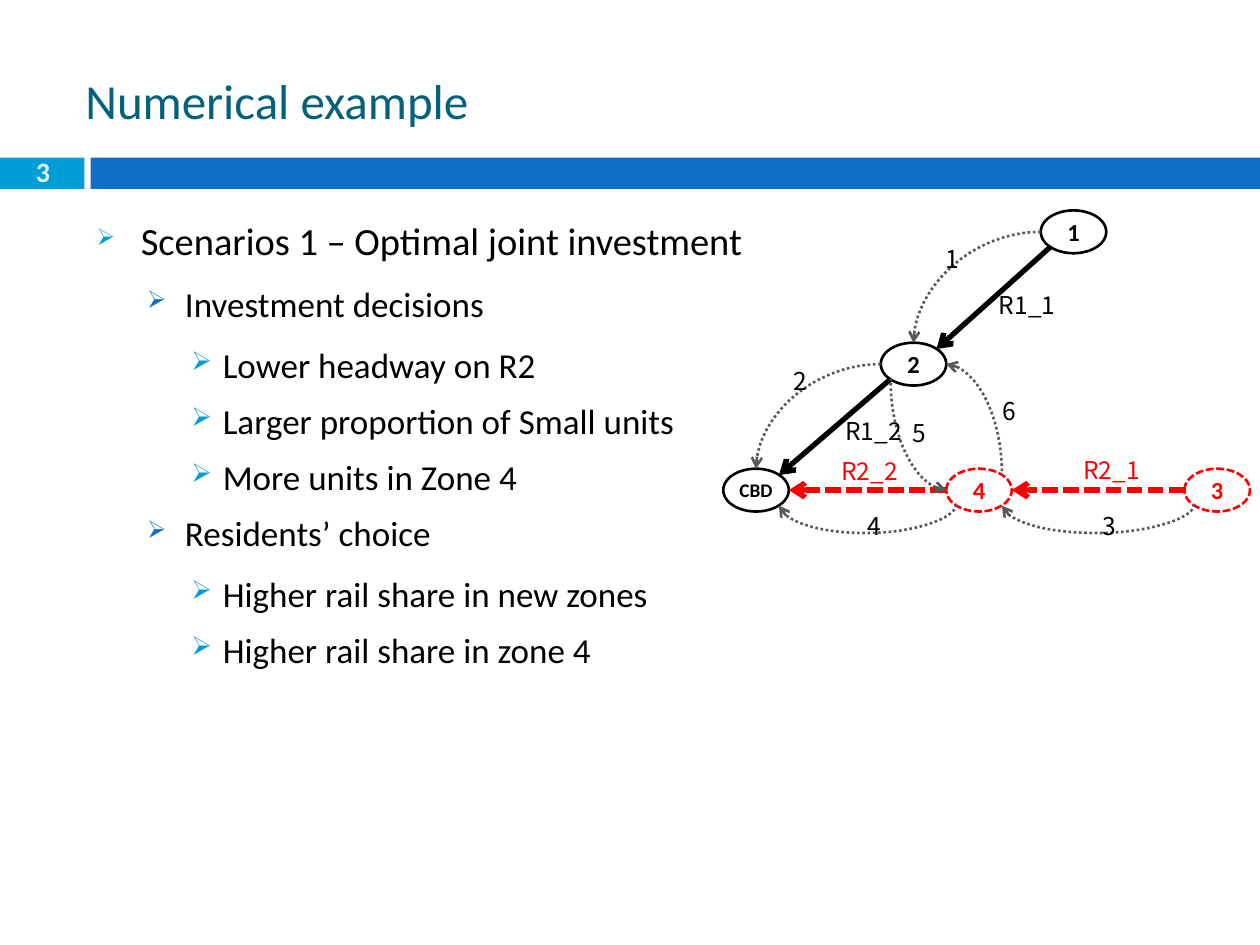
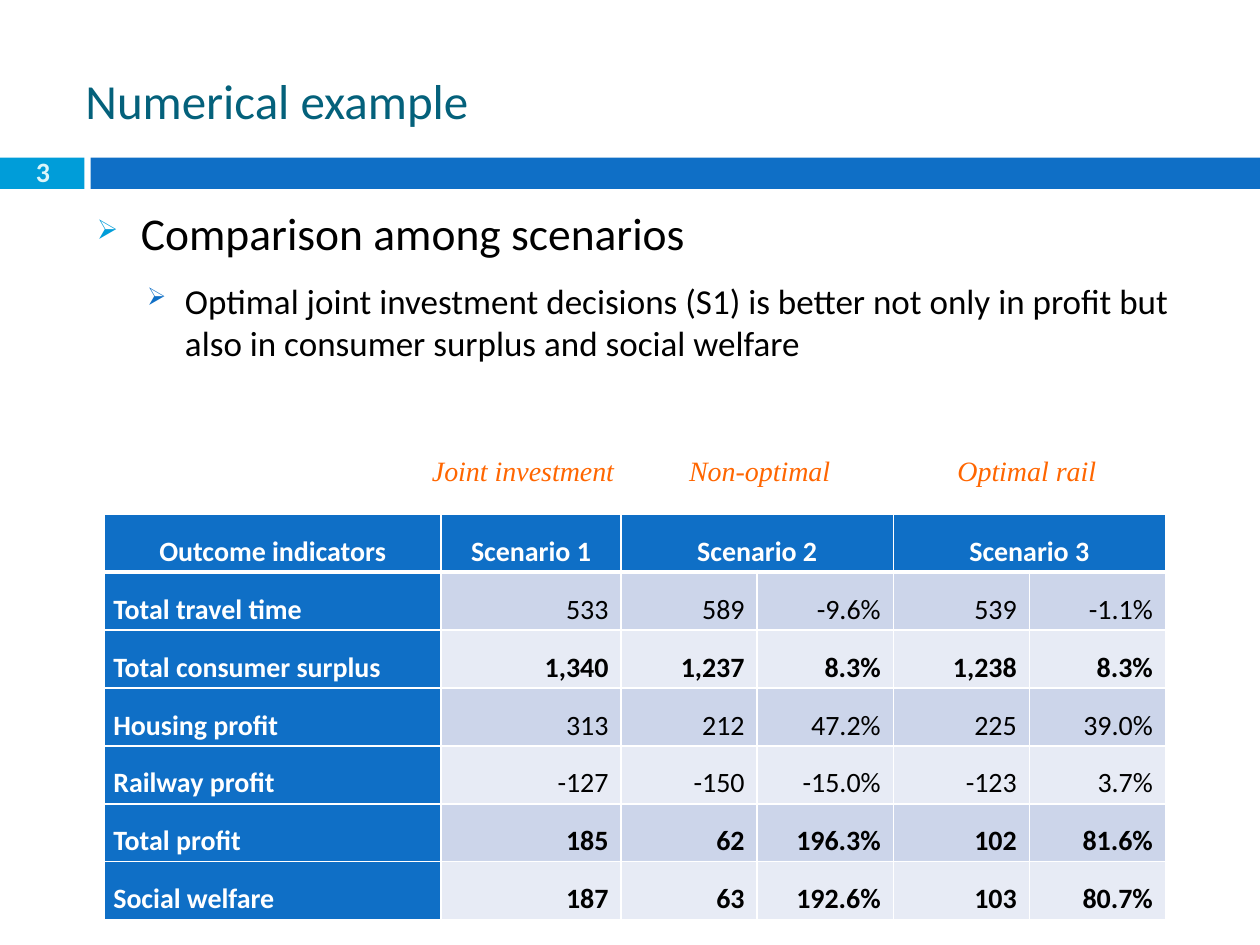
from dataclasses import dataclass

from lxml.etree import SubElement
from pptx import Presentation
from pptx.dml.color import RGBColor
from pptx.enum.dml import MSO_LINE as Dash
from pptx.enum.shapes import MSO_CONNECTOR as Link, MSO_SHAPE as Preset
from pptx.enum.text import MSO_ANCHOR as Anchor, PP_ALIGN as Align
from pptx.oxml.ns import qn
from pptx.util import Inches, Pt

CYAN, BLUE, TEAL, PALE = "009DD9", "0F6FC6", "04617B", "DBF5F9"
BLACK, WHITE, RED, GREY, ORANGE = "000000", "FFFFFF", "FF0000", "595959", "FF6600"
BAND_FILLS = ("CCD5EA", "E7EBF5")
BODY_FONT, LABEL_FONT, CAPTION_FONT = "Calibri", "Noto Sans CJK SC", "Times New Roman"

NODE_WIDTH, NODE_HEIGHT = 0.52, 0.34
DIAGONAL = 0.35  # half of cos 45 degrees
# Where routes touch an ellipse: offset from its centre as a share of its size
SITES = {
    "top": (0, -0.5),
    "left": (-0.5, 0),
    "bottom left": (-DIAGONAL, DIAGONAL),
    "bottom right": (DIAGONAL, DIAGONAL),
    "right": (0.5, 0),
    "top right": (DIAGONAL, -DIAGONAL),
}
LOOP_DEPTH, LOOP_WIDTH = 0.23, 0.01


@dataclass(frozen=True)
class Level:
    margin: float
    hanging: float
    before: int
    after: int
    color: str
    bullet_percent: int


@dataclass(frozen=True)
class Node:
    name: str
    left: float
    top: float
    color: str = BLACK
    size: int = 14
    dash: Dash | None = None


@dataclass(frozen=True)
class Route:
    start: str
    start_site: str
    end: str
    end_site: str
    kind: str
    color: str = GREY
    width: float = 1.5
    dash: Dash | None = Dash.ROUND_DOT
    arrow: str = "tailEnd"


@dataclass(frozen=True)
class Label:
    text: str
    left: float
    top: float
    width: float = 0.2
    height: float = 0.24
    color: str = BLACK


LEVELS = (
    Level(0.35, 0.35, 3, 6, CYAN, 60),
    Level(0.7, 0.3, 5, 6, BLUE, 70),
    Level(1, 0.25, 5, 3, CYAN, 75),
)

NODES = (
    Node("CBD", 5.74, 3.72, size=11),
    Node("2", 6.99, 2.72),
    Node("1", 8.26, 1.67),
    Node("4", 7.51, 3.72, RED, dash=Dash.SQUARE_DOT),
    Node("3", 9.4, 3.72, RED, dash=Dash.SQUARE_DOT),
)

# A quarter curve leaves its start horizontally and reaches its end vertically.
ROUTES = (
    Route("1", "bottom left", "2", "top right", "straight", BLACK, 3, None),
    Route("2", "bottom left", "CBD", "top right", "straight", BLACK, 3, None),
    Route("4", "left", "CBD", "right", "straight", RED, 3, Dash.SQUARE_DOT),
    Route("3", "left", "4", "right", "straight", RED, 3, Dash.SQUARE_DOT),
    Route("1", "left", "2", "top", "quarter"),
    Route("2", "left", "CBD", "top", "quarter"),
    Route("3", "bottom left", "4", "bottom right", "loop"),
    Route("4", "bottom left", "CBD", "bottom right", "loop"),
    Route("2", "right", "4", "top right", "quarter", arrow="headEnd"),
    Route("4", "left", "2", "bottom left", "quarter", arrow="headEnd"),
)

LABELS = (
    Label("2", 6.2, 2.86),
    Label("1", 7.41, 1.89),
    Label("4", 6.79, 4.01),
    Label("3", 8.65, 4.01),
    Label("6", 7.86, 3.09),
    Label("5", 7.14, 3.27),
    Label("R1_1", 7.83, 2.25, 0.76, 0.34),
    Label("R1_2", 6.61, 3.25, 0.72, 0.34),
    Label("R2_2", 6.58, 3.57, 0.9, 0.34, RED),
    Label("R2_1", 8.5, 3.56, 0.92, 0.34, RED),
)

COLUMN_WIDTHS = (2.67, 1.43, 1.08, 1.08, 1.08, 1.08)
ROW_HEIGHT = 0.46
HEADERS = {0: "Outcome indicators", 1: "Scenario 1", 2: "Scenario 2", 4: "Scenario 3"}
OUTCOMES = (
    ("Total travel time", "533", "589", "-9.6%", "539", "-1.1%"),
    ("Total consumer surplus", "1,340", "1,237", "8.3%", "1,238", "8.3%"),
    ("Housing profit", "313", "212", "47.2%", "225", "39.0%"),
    ("Railway profit", "-127", "-150", "-15.0%", "-123", "3.7%"),
    ("Total profit", "185", "62", "196.3%", "102", "81.6%"),
    ("Social welfare", "187", "63", "192.6%", "103", "80.7%"),
)
KEY_OUTCOMES = {"Total consumer surplus", "Total profit", "Social welfare"}


def rgb(color: str) -> RGBColor:
    return RGBColor.from_string(color)


def inches(*lengths: float) -> list:
    return [Inches(length) for length in lengths]


def write(para, text: str, size: float, color: str = BLACK, font: str = BODY_FONT,
          bold: bool = False, italic: bool = False, align=Align.LEFT) -> None:
    para.alignment = align
    span = para.add_run()
    span.text = text
    span.font.name, span.font.size = font, Pt(size)
    span.font.bold, span.font.italic = bold, italic
    span.font.color.rgb = rgb(color)


def add_text(shapes, text: str, at: tuple, size: float, anchor=Anchor.TOP,
             right_inset: float = 0.1, **style) -> None:
    box = shapes.add_textbox(*inches(*at))
    frame = box.text_frame
    frame.word_wrap, frame.vertical_anchor = True, anchor
    frame.margin_right = Inches(right_inset)
    write(frame.paragraphs[0], text, size, **style)


def add_filled(shapes, preset, at: tuple, fill: str):
    shape = shapes.add_shape(preset, *inches(*at))
    shape.shadow.inherit = False
    shape.fill.solid()
    shape.fill.fore_color.rgb = rgb(fill)
    shape.line.fill.background()
    return shape


def style_line(line, color: str, width: float, dash) -> None:
    line.color.rgb = rgb(color)
    line.width = Pt(width)
    if dash is not None:
        line.dash_style = dash


def add_page(deck):
    """Add a page with the title and bands that all pages share."""
    page = deck.slides.add_slide(deck.slide_layouts[6])
    add_filled(page.shapes, Preset.RECTANGLE, (0, 1.25, 0.67, 0.25), CYAN)
    add_filled(page.shapes, Preset.RECTANGLE, (0.72, 1.25, 9.28, 0.25), BLUE)
    add_text(page.shapes, "Numerical example", (0.58, 0.25, 8.92, 1.08), 28,
             anchor=Anchor.MIDDLE, color=TEAL)
    add_text(page.shapes, "3", (0.03, 1.18, 0.62, 0.37), 16,
             color=PALE, bold=True, align=Align.CENTER)
    return page


def add_bullets(shapes, at: tuple, items: tuple, heading_size: int) -> None:
    """Write (level, text) pairs as a bulleted outline."""
    frame = shapes.add_textbox(*inches(*at)).text_frame
    frame.word_wrap = True
    for index, (depth, text) in enumerate(items):
        para = frame.add_paragraph() if index else frame.paragraphs[0]
        level = LEVELS[depth]
        para.level = depth
        para.space_before, para.space_after = Pt(level.before), Pt(level.after)
        write(para, text, 20 if depth else heading_size)
        properties = para._p.get_or_add_pPr()
        properties.set("marL", str(Inches(level.margin)))
        properties.set("indent", str(-Inches(level.hanging)))
        bullet_color = SubElement(properties, qn("a:buClr"))
        SubElement(bullet_color, qn("a:srgbClr"), val=level.color)
        SubElement(properties, qn("a:buSzPct"), val=str(level.bullet_percent * 1000))
        SubElement(properties, qn("a:buChar"), char="➢")


def add_node(shapes, node: Node) -> None:
    oval = add_filled(shapes, Preset.OVAL,
                      (node.left, node.top, NODE_WIDTH, NODE_HEIGHT), WHITE)
    style_line(oval.line, node.color, 1.5, node.dash)
    frame = oval.text_frame
    frame.margin_left = frame.margin_right = Inches(0.04)
    frame.margin_top = frame.margin_bottom = Inches(0.04)
    frame.vertical_anchor = Anchor.MIDDLE
    write(frame.paragraphs[0], node.name, node.size, node.color, bold=True,
          align=Align.CENTER)


def site_point(node: Node, site: str) -> tuple[float, float]:
    across, down = SITES[site]
    return (node.left + NODE_WIDTH * (0.5 + across),
            node.top + NODE_HEIGHT * (0.5 + down))


def add_route(shapes, route: Route, nodes: dict[str, Node]) -> None:
    start = site_point(nodes[route.start], route.start_site)
    end = site_point(nodes[route.end], route.end_site)
    if route.kind == "loop":
        # Laid out upright, then turned a quarter so that it bulges downwards
        middle, half = (start[0] + end[0]) / 2, (start[0] - end[0]) / 2
        start, end = ((middle - LOOP_WIDTH / 2, start[1] - half),
                      (middle + LOOP_WIDTH / 2, end[1] + half))
    link = Link.STRAIGHT if route.kind == "straight" else Link.CURVE
    connector = shapes.add_connector(link, *inches(*start, *end))
    style_line(connector.line, route.color, route.width, route.dash)

    properties = connector.element.spPr
    geometry = properties.find(qn("a:prstGeom"))
    if route.kind == "quarter":
        geometry.set("prst", "curvedConnector2")
    elif route.kind == "loop":
        properties.find(qn("a:xfrm")).set("rot", str(90 * 60000))
        SubElement(geometry.find(qn("a:avLst")), qn("a:gd"), name="adj1",
                   fmla=f"val {round(LOOP_DEPTH / LOOP_WIDTH * 100000)}")
    SubElement(properties.find(qn("a:ln")), qn(f"a:{route.arrow}"), type="arrow")
    SubElement(properties, qn("a:effectLst"))


def add_network(page) -> None:
    shapes = page.shapes.add_group_shape().shapes
    nodes = {node.name: node for node in NODES}
    for node in NODES:
        add_node(shapes, node)
    for route in ROUTES:
        add_route(shapes, route, nodes)
    for label in LABELS:
        add_text(shapes, label.text, (label.left, label.top, label.width, label.height),
                 14, right_inset=0, color=label.color, font=LABEL_FONT)


def fill_cell(cell, text: str, fill: str, bottom: float = 1,
              right_inset: float = 0.07, **style) -> None:
    cell.margin_left, cell.margin_right = inches(0.07, right_inset)
    cell.margin_top = cell.margin_bottom = 0
    cell.vertical_anchor = Anchor.MIDDLE
    properties = cell._tc.get_or_add_tcPr()
    for side, width in (("L", 1), ("R", 1), ("T", 1), ("B", bottom)):
        border = SubElement(properties, qn(f"a:ln{side}"), w=str(Pt(width)))
        SubElement(SubElement(border, qn("a:solidFill")), qn("a:srgbClr"), val=WHITE)
    cell.fill.solid()
    cell.fill.fore_color.rgb = rgb(fill)
    para = cell.text_frame.paragraphs[0]
    para.line_spacing = 1.5
    if text:
        write(para, text, 16, **style)


def add_outcome_table(page) -> None:
    rows, columns = len(OUTCOMES) + 1, len(COLUMN_WIDTHS)
    frame = page.shapes.add_table(rows, columns, *inches(
        0.83, 4.08, sum(COLUMN_WIDTHS), rows * ROW_HEIGHT))
    table = frame.table
    table.horz_banding = False
    for column, width in zip(table.columns, COLUMN_WIDTHS):
        column.width = Inches(width)
    for row in table.rows:
        row.height = Inches(ROW_HEIGHT)
    for column in range(columns):
        fill_cell(table.cell(0, column), HEADERS.get(column, ""), BLUE, bottom=3,
                  color=WHITE, bold=True, align=Align.CENTER)
    for column in (2, 4):
        table.cell(0, column).merge(table.cell(0, column + 1))
    for row, (name, *values) in enumerate(OUTCOMES, start=1):
        fill_cell(table.cell(row, 0), name, BLUE, color=WHITE, bold=True)
        for column, value in enumerate(values, start=1):
            fill_cell(table.cell(row, column), value, BAND_FILLS[(row - 1) % 2],
                      right_inset=0.1, bold=name in KEY_OUTCOMES, align=Align.RIGHT)


def build_scenario_page(deck) -> None:
    page = add_page(deck)
    add_bullets(page.shapes, (0.67, 1.67, 9, 5.42), (
        (0, "Scenarios 1 – Optimal joint investment"),
        (1, "Investment decisions"),
        (2, "Lower headway on R2"),
        (2, "Larger proportion of Small units"),
        (2, "More units in Zone 4"),
        (1, "Residents’ choice"),
        (2, "Higher rail share in new zones"),
        (2, "Higher rail share in zone 4"),
    ), heading_size=22)
    add_network(page)


def build_comparison_page(deck) -> None:
    page = add_page(deck)
    add_bullets(page.shapes, (0.67, 1.58, 9, 2.08), (
        (0, "Comparison among scenarios"),
        (1, "Optimal joint investment decisions (S1) is better not only in profit but "
            "also in consumer surplus and social welfare"),
    ), heading_size=26)
    add_outcome_table(page)
    for text, left, align in (("Joint investment", 3.33, Align.LEFT),
                              ("Non-optimal", 5.18, Align.CENTER),
                              ("Optimal rail", 7.3, Align.CENTER)):
        add_text(page.shapes, text, (left, 3.55, 1.7, 0.37), 16, color=ORANGE,
                 font=CAPTION_FONT, italic=True, align=align)


def main() -> None:
    deck = Presentation()
    deck.slide_width, deck.slide_height = inches(10, 7.5)
    build_scenario_page(deck)
    build_comparison_page(deck)
    deck.save("out.pptx")


if __name__ == "__main__":
    main()
